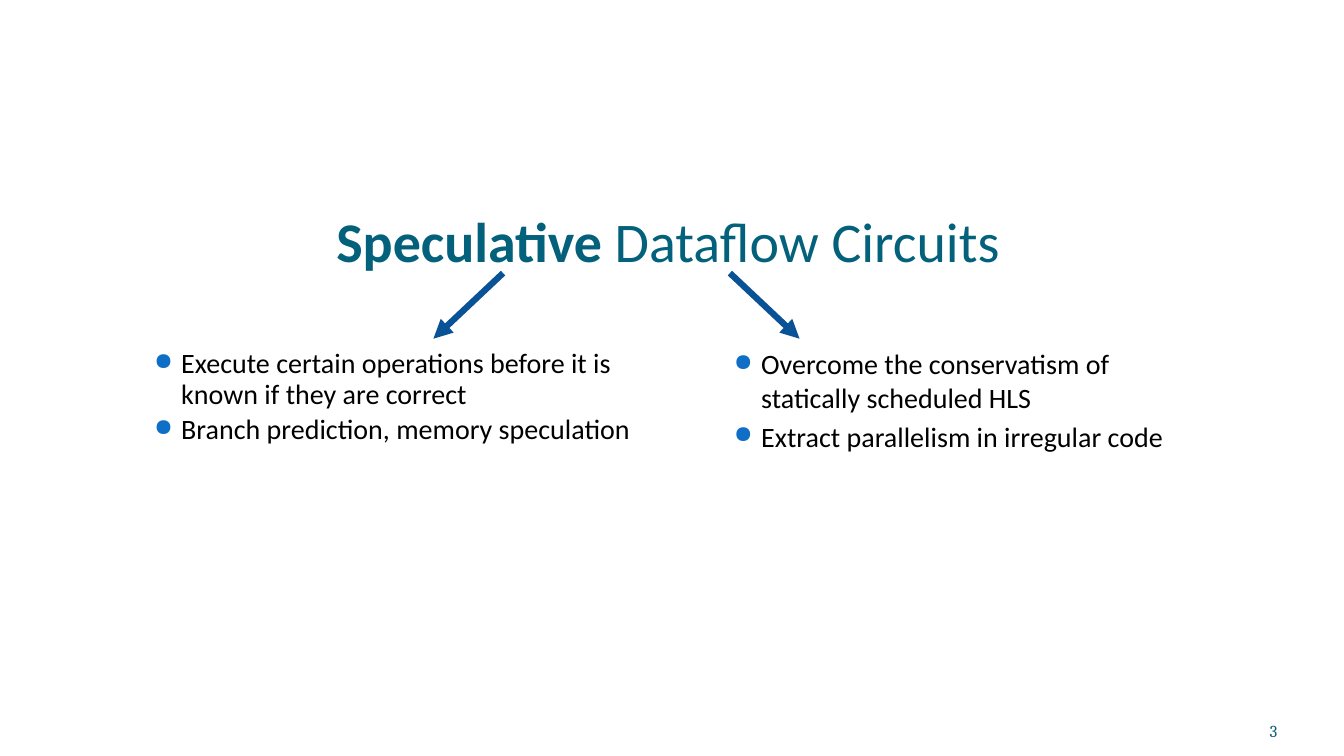
from lxml import etree
from pptx import Presentation
from pptx.dml.color import RGBColor
from pptx.enum.shapes import MSO_CONNECTOR
from pptx.enum.text import MSO_ANCHOR, PP_ALIGN
from pptx.oxml.ns import qn
from pptx.util import Inches, Pt

STRAIGHT = MSO_CONNECTOR.STRAIGHT
TOP, BOTTOM = MSO_ANCHOR.TOP, MSO_ANCHOR.BOTTOM
LEFT, CENTER, RIGHT = PP_ALIGN.LEFT, PP_ALIGN.CENTER, PP_ALIGN.RIGHT
COLORS = {"title": "04617B", "number": "045D75", "text": "000000",
          "bullet": "0F6FC6", "arrow": "095295"}

prs = Presentation()
prs.slide_width, prs.slide_height = Inches(13.33), Inches(7.5)
W, H = prs.slide_width / 100, prs.slide_height / 100
s = prs.slides.add_slide(prs.slide_layouts[6])


def add_text(box, anchor, insets):
    x, y, w, h = box
    sp = s.shapes.add_textbox(int(x * W), int(y * H), int(w * W), int(h * H))
    tf = sp.text_frame
    tf.word_wrap = True
    tf.vertical_anchor = anchor
    tf.margin_left, tf.margin_top, tf.margin_right, tf.margin_bottom = map(Inches, insets)
    return tf


def add_run(p, text, size, color, font="Calibri", bold=False):
    r = p.add_run()
    r.text = text
    r.font.size, r.font.name, r.font.bold = Pt(size), font, bold
    r.font.color.rgb = RGBColor.from_string(COLORS[color])


p = add_text((86.72, 92.67, 8.33, 5.33), BOTTOM, (0, 0, 0, 0)).paragraphs[0]
p.alignment = RIGHT
add_run(p, "3", 12, "number", font="Cambria")

p = add_text((13.95, 9.07, 71.49, 27.2), BOTTOM, (0, 0.05, 0, 0)).paragraphs[0]
p.alignment = CENTER
add_run(p, "Speculative", 40, "title", bold=True)
add_run(p, " Dataflow Circuits", 40, "title")

columns = [
    ((7.5, 45.6, 40.44, 29.73), 0.9,
     ["Execute certain operations before it is known if they are correct",
      "Branch prediction, memory speculation"]),
    ((50.64, 45.2, 40.14, 36.8), 1.0,
     ["Overcome the conservatism of statically scheduled HLS",
      "Extract parallelism in irregular code"]),
]
for box, spacing, points in columns:
    tf = add_text(box, TOP, (0.1, 0.05, 0.1, 0.05))
    for i, point in enumerate(points):
        p = tf.add_paragraph() if i else tf.paragraphs[0]
        p.level, p.alignment = 1, LEFT
        p.line_spacing, p.space_before = spacing, Pt(4)
        add_run(p, point, 20, "text")
        pPr = p._p.get_or_add_pPr()
        pPr.set("marL", str(Inches(0.7)))
        pPr.set("indent", str(Inches(-0.27)))
        clr = etree.SubElement(pPr, qn("a:buClr"))
        etree.SubElement(clr, qn("a:srgbClr"), val=COLORS["bullet"])
        etree.SubElement(pPr, qn("a:buSzPct"), val="85000")
        etree.SubElement(pPr, qn("a:buChar"), char="●")

for side in (1, -1):
    start, end = 45.87 + side * 8.44, 45.87 + side * 13.62
    arrow = s.shapes.add_connector(STRAIGHT, int(start * W), int(36.13 * H),
                                   int(end * W), int(44.8 * H))
    arrow.line.width = Pt(4.5)
    arrow.line.color.rgb = RGBColor.from_string(COLORS["arrow"])
    etree.SubElement(arrow.line._get_or_add_ln(), qn("a:tailEnd"), type="triangle")
    etree.SubElement(arrow._element.spPr, qn("a:effectLst"))

prs.save("out.pptx")
